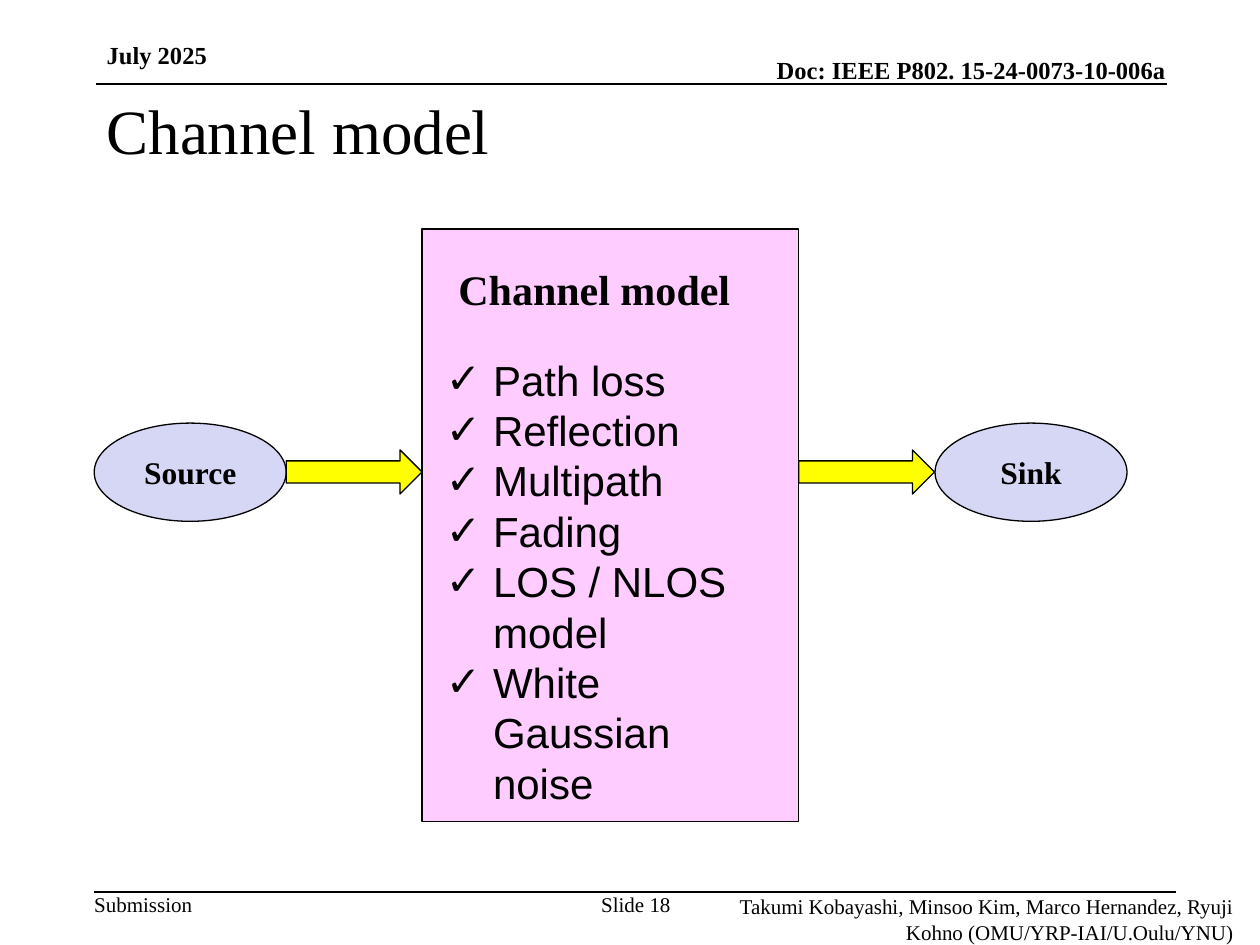
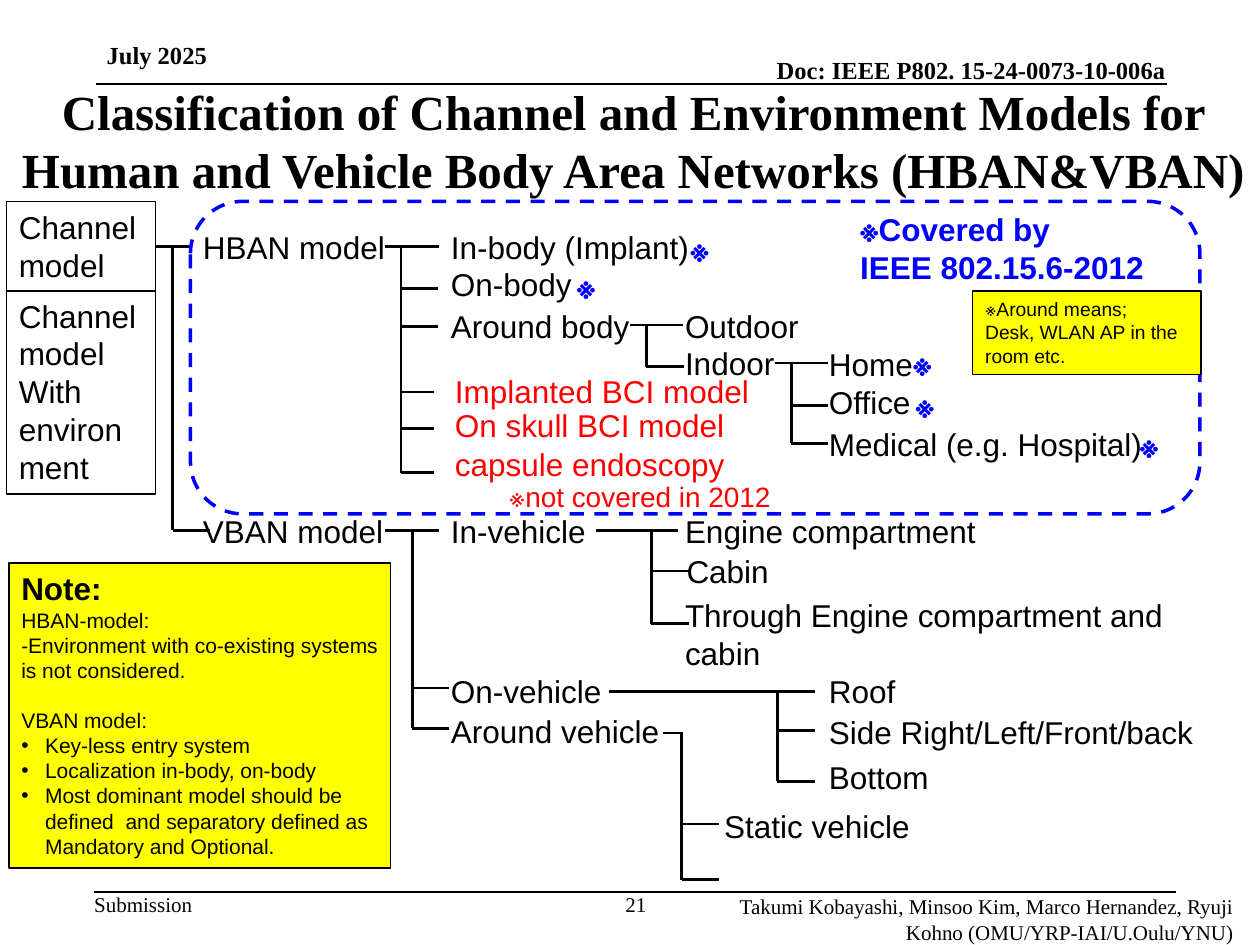
from dataclasses import dataclass

from lxml.etree import SubElement
from pptx import Presentation
from pptx.dml.color import RGBColor
from pptx.enum.dml import MSO_LINE
from pptx.enum.shapes import MSO_CONNECTOR, MSO_SHAPE
from pptx.enum.text import MSO_ANCHOR, PP_ALIGN
from pptx.oxml.ns import qn
from pptx.util import Cm, Pt

SERIF, SANS = "Times New Roman", "Arial"
BLACK, RED, BLUE = "000000", "FF0000", "0000FF"
YELLOW, PINK, LAVENDER = "FFFF00", "FFCCFF", "D6D6F5"
DEFAULT_MARGINS, NO_MARGINS, WIDE_MARGINS = (0.25, 0.13), (0, 0), (0.25, 0.25)
LABEL_HEIGHT = 1.02
HBAN_Y, VBAN_Y = 4.97, 10.69
COLUMNS = (3.84, 8.84, 13.56, 16.46)


@dataclass
class Branch:
    """A stem, a trunk hanging from it and stubs leaving the trunk."""

    stem: tuple
    stem_y: float
    trunk_x: float
    stubs: tuple
    stub_length: float = 0.75


BRANCHES = (
    Branch((7.77, 8.84), HBAN_Y, 8.08, (5.82, 6.58)),
    Branch((12.7, 13.77), 6.55, 13.03, (7.39,)),
    Branch((15.62, 16.69), 7.32, 15.95, (8.18, 8.94)),
    Branch((7.77, 8.84), VBAN_Y, 8.31, (13.87, 14.68)),
    Branch((12.01, 13.67), VBAN_Y, 13.13, (11.51, 12.57)),
    Branch((12.27, 16.43), 13.94, 15.67, (14.73, 15.75)),
    Branch((13.36, 13.77), 14.78, 13.74, (16.61, 17.73)),
)

LABELS = (
    ("HBAN model", COLUMNS[0], 4.47, 7.19),
    ("VBAN model", COLUMNS[0], 10.19, 7.19),
    ("In-body (Implant)", COLUMNS[1], 4.47, 7.19),
    ("On-body", COLUMNS[1], 5.21, 7.19),
    ("Around body", COLUMNS[1], 6.05, 4.11),
    ("In-vehicle", COLUMNS[1], 10.19, 7.19),
    ("On-vehicle", COLUMNS[1], 13.41, 7.19),
    ("Around vehicle", COLUMNS[1], 14.22, 7.19),
    ("Outdoor", COLUMNS[2], 6.05, 4.11),
    ("Indoor", COLUMNS[2], 6.81, 2.46),
    ("Engine compartment", COLUMNS[2], 10.19, 9.35),
    ("Cabin", 13.59, 11, 4.98),
    ("Through Engine compartment and cabin", COLUMNS[2], 11.89, 10.77),
    ("Static vehicle", 14.35, 16.13, 7.19),
    ("Home", COLUMNS[3], 6.83, 2.46),
    ("Office", COLUMNS[3], 7.59, 2.46),
    ("Medical (e.g. Hospital)", COLUMNS[3], 8.43, 6.96),
    ("Roof", COLUMNS[3], 13.41, 7.19),
    ("Side Right/Left/Front/back", COLUMNS[3], 14.25, 8.76),
    ("Bottom", COLUMNS[3], 15.16, 7.19),
)
UNCOVERED_MODELS = (
    ("Implanted BCI model", 7.37),
    ("On skull BCI model", 8.05),
    ("capsule endoscopy", 8.84),
)
UNCOVERED_STUBS = (7.9, 8.64, 9.53)
COVERED_MARKS = ((13.67, 4.5), (11.38, 5.26), (18.16, 6.81), (18.21, 7.65), (22.73, 8.46))


def colour(hex_text):
    """Turn a hex string into a colour."""
    return RGBColor.from_string(hex_text)


def format_paragraph(paragraph, size, font, ink, bold):
    """Give every run of a paragraph the same character style."""
    for run in paragraph.runs:
        run.font.size = Pt(size)
        run.font.name = font
        run.font.bold = bold
        run.font.color.rgb = colour(ink)


def write_text(shape, text, size=18, font=SANS, ink=BLACK, bold=False,
               align=PP_ALIGN.LEFT, anchor=MSO_ANCHOR.TOP, margins=DEFAULT_MARGINS):
    """Fill a shape with wrapped text in one style."""
    frame = shape.text_frame
    frame.text = text
    frame.word_wrap = True
    frame.vertical_anchor = anchor
    frame.margin_left = frame.margin_right = Cm(margins[0])
    frame.margin_top = frame.margin_bottom = Cm(margins[1])
    for paragraph in frame.paragraphs:
        paragraph.alignment = align
        format_paragraph(paragraph, size, font, ink, bold)
    return frame


def add_text(slide, text, left, top, width, height=LABEL_HEIGHT, **style):
    """Add a text box."""
    box = slide.shapes.add_textbox(Cm(left), Cm(top), Cm(width), Cm(height))
    return write_text(box, text, **style)


def add_box(slide, kind, left, top, width, height, fill=None, line=BLACK, weight=0.75):
    """Add an outlined preset shape, hollow unless a fill is given."""
    shape = slide.shapes.add_shape(kind, Cm(left), Cm(top), Cm(width), Cm(height))
    shape.shadow.inherit = False
    if fill:
        shape.fill.solid()
        shape.fill.fore_color.rgb = colour(fill)
    else:
        shape.fill.background()
    shape.line.color.rgb = colour(line)
    shape.line.width = Pt(weight)
    return shape


def add_line(slide, start, end, weight=1.5):
    """Add a straight black connector between two points."""
    connector = slide.shapes.add_connector(
        MSO_CONNECTOR.STRAIGHT, *(Cm(value) for value in (*start, *end)))
    connector.line.color.rgb = colour(BLACK)
    connector.line.width = Pt(weight)
    SubElement(connector._element.spPr, qn("a:effectLst"))
    return connector


def add_bullet(paragraph, character, indent):
    """Give a paragraph a bullet with a hanging indent."""
    properties = paragraph._p.get_or_add_pPr()
    properties.set("marL", str(Cm(indent)))
    properties.set("indent", str(-Cm(indent)))
    SubElement(properties, qn("a:buFont"), typeface=SANS)
    SubElement(properties, qn("a:buChar"), char=character)


def add_stubs(slide, trunk_x, heights, length):
    """Add horizontal stubs leaving a trunk to the right."""
    for y in heights:
        add_line(slide, (trunk_x, y), (trunk_x + length, y))


def add_branch(slide, branch):
    """Draw a branch of the tree and return its stem."""
    start, end = branch.stem
    stem = add_line(slide, (start, branch.stem_y), (end, branch.stem_y))
    add_line(slide, (branch.trunk_x, branch.stem_y), (branch.trunk_x, branch.stubs[-1]))
    add_stubs(slide, branch.trunk_x, branch.stubs, branch.stub_length)
    return stem


def add_page(presentation, page_label):
    """Add a blank slide with the shared header and footer."""
    slide = presentation.slides.add_slide(presentation.slide_layouts[6])
    header = dict(size=14, font=SERIF, bold=True, anchor=MSO_ANCHOR.BOTTOM)
    footer = dict(size=12, font=SERIF)
    add_text(slide, "Doc: IEEE P802. 15-24-0073-10-006a", 10.16, 1.09, 13.34, 0.61,
             align=PP_ALIGN.RIGHT, margins=NO_MARGINS, **header)
    add_text(slide, "July 2025", 1.9, 1.04, 4.45, 0.61, margins=WIDE_MARGINS, **header)
    add_line(slide, (1.93, 1.7), (23.52, 1.7), 1)
    add_line(slide, (1.9, 17.98), (23.7, 17.98), 1)
    add_text(slide, "Submission", 1.9, 17.98, 1.98, 0.51, margins=NO_MARGINS, **footer)
    add_text(slide, page_label, 12.07, 17.97, 1.5, 0.51,
             align=PP_ALIGN.CENTER, margins=NO_MARGINS, **footer)
    add_text(slide, "Takumi Kobayashi, Minsoo Kim, Marco Hernandez, Ryuji Kohno "
             "(OMU/YRP-IAI/U.Oulu/YNU)", 13.5, 17.77, 11.62, 0.7,
             align=PP_ALIGN.RIGHT, margins=WIDE_MARGINS, **footer)
    return slide


def add_title(slide, text, left, top, width, **style):
    """Add the slide title."""
    add_text(slide, text, left, top, width, 1.42, font=SERIF,
             anchor=MSO_ANCHOR.MIDDLE, margins=WIDE_MARGINS, **style)


def build_channel_slide(presentation):
    """Build the source, channel and sink diagram."""
    slide = add_page(presentation, "Slide 18")
    add_title(slide, "Channel model", 1.9, 1.9, 21.59, size=36)
    for name, left in (("Source", 1.9), ("Sink", 18.85)):
        terminal = add_box(slide, MSO_SHAPE.OVAL, left, 8.53, 3.87, 1.98, LAVENDER)
        write_text(terminal, name, font=SERIF, bold=True,
                   align=PP_ALIGN.CENTER, anchor=MSO_ANCHOR.MIDDLE)
    for left in (5.77, 16.1):
        add_box(slide, MSO_SHAPE.RIGHT_ARROW, left, 9.07, 2.74, 0.89, YELLOW)
    add_box(slide, MSO_SHAPE.RECTANGLE, 8.51, 4.62, 7.59, 11.94, PINK)
    add_text(slide, "Channel model", 8.99, 5.18, 6.63, 1.27, size=24, font=SERIF, bold=True)
    effects = ("Path loss", "Reflection", "Multipath", "Fading",
               "LOS / NLOS model", "White Gaussian noise")
    frame = add_text(slide, "\n".join(effects), 8.74, 7.01, 6.63, 9.5, size=24)
    for paragraph in frame.paragraphs:
        add_bullet(paragraph, "✓", 0.95)


def add_note(slide):
    """Add the yellow note about both model families."""
    lines = ("Note:", "HBAN-model:",
             "-Environment with co-existing systems is not considered.", "VBAN model:",
             "Key-less entry system", "Localization in-body, on-body",
             "Most dominant model should be defined  and separatory defined as "
             "Mandatory and Optional.")
    note = add_box(slide, MSO_SHAPE.RECTANGLE, 0.18, 11.35, 7.7, 6.15, YELLOW)
    paragraphs = write_text(note, "\n".join(lines), size=12).paragraphs
    format_paragraph(paragraphs[0], 18, SANS, BLACK, True)
    paragraphs[3].space_before = Pt(14)
    for paragraph in paragraphs[4:]:
        add_bullet(paragraph, "•", 0.48)


def build_classification_slide(presentation):
    """Build the tree of channel and environment models."""
    slide = add_page(presentation, "21")
    add_title(slide, "Classification of Channel and Environment Models for Human and "
              "Vehicle Body Area Networks (HBAN&VBAN)", 0, 2.11, 25.53,
              size=28, bold=True, align=PP_ALIGN.CENTER)
    add_note(slide)
    root = add_box(slide, MSO_SHAPE.RECTANGLE, 0.13, 4.06, 3, 1.82)
    write_text(root, "Channel model")
    environment = add_box(slide, MSO_SHAPE.RECTANGLE, 0.13, 5.85, 3, 4.11)
    write_text(environment, "Channel model\nWith environment")

    for text, left, top, width in LABELS:
        add_text(slide, text, left, top, width)
    root_stem = add_branch(slide, Branch((3.13, 3.84), HBAN_Y, 3.48, (VBAN_Y,)))
    root_stem.begin_connect(root, 3)
    for branch in BRANCHES:
        add_branch(slide, branch)
    add_line(slide, (8.08, 6.58), (8.08, UNCOVERED_STUBS[-1]))
    add_stubs(slide, 8.08, UNCOVERED_STUBS, 0.66)
    for text, top in UNCOVERED_MODELS:
        add_text(slide, text, 8.92, top, 7.19, ink=RED)
    add_text(slide, "※not covered in 2012", 10.01, 9.53, 6.73, 0.94, size=16, ink=RED)

    add_text(slide, "※Covered by\nIEEE 802.15.6-2012", 17.09, 4.11, 7.11, 1.8,
             ink=BLUE, bold=True)
    covered = add_box(slide, MSO_SHAPE.ROUNDED_RECTANGLE, 3.84, 4.06, 20.35, 6.3,
                      line=BLUE, weight=2)
    covered.line.dash_style = MSO_LINE.DASH
    around = add_box(slide, MSO_SHAPE.RECTANGLE, 19.61, 5.87, 4.6, 1.68, YELLOW)
    write_text(around, "※Around means;\nDesk, WLAN AP in the room etc.", size=11)
    for left, top in COVERED_MARKS:
        add_text(slide, "※", left, top, 0.99, ink=BLUE, bold=True)


def main():
    """Build and save the presentation."""
    presentation = Presentation()
    presentation.slide_width = Cm(25.4)
    presentation.slide_height = Cm(19.05)
    build_channel_slide(presentation)
    build_classification_slide(presentation)
    presentation.save("out.pptx")


if __name__ == "__main__":
    main()
